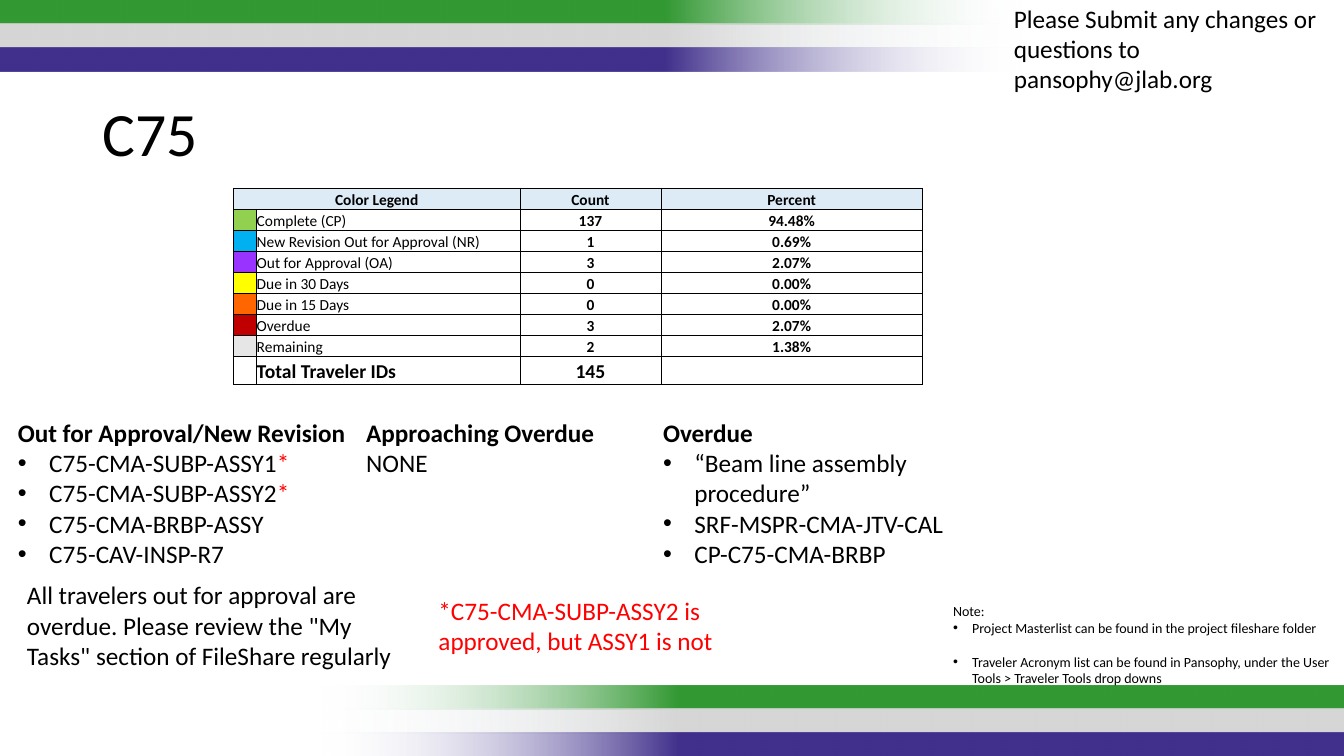
from lxml import etree
from pptx import Presentation
from pptx.dml import color
from pptx.enum import shapes, text
from pptx.oxml import ns
from pptx.util import Cm, Pt

BLACK, RED = "000000", "FF0000"
GREEN, GREY, PURPLE = "339933", "D6D6D6", "42318C"


def paint(target, hex_colour):
    """Give a font, fill or gradient stop a solid colour."""
    if hasattr(target, "solid"):
        target.solid()
        target.fore_color.rgb = color.RGBColor.from_string(hex_colour)
    else:
        target.color.rgb = color.RGBColor.from_string(hex_colour)


def add_span(paragraph, wording, size, colour=BLACK, bold=False):
    span = paragraph.add_run()
    span.text = wording
    for name, value in {"name": "Calibri", "size": Pt(size), "bold": bold}.items():
        setattr(span.font, name, value)
    paint(span.font, colour)


deck = Presentation()
deck.slide_width, deck.slide_height = Cm(33.87), Cm(19.05)
page = deck.slides.add_slide(deck.slide_layouts[6])

# Stripes: the top set is turned so that it fades to the right
BAND_WIDTH, BAND_HEIGHT, BAND_STEP = 25.83, 0.61, 0.595
for left, top, turn in [(-0.03, 0, 180), (8.07, 17.27, 0)]:
    for index, colour in enumerate([GREEN, GREY, PURPLE]):
        band = page.shapes.add_shape(
            shapes.MSO_SHAPE.RECTANGLE, Cm(left), Cm(top + index * BAND_STEP),
            Cm(BAND_WIDTH), Cm(BAND_HEIGHT))
        band.rotation = turn
        band.shadow.inherit = False
        band.line.fill.background()
        band.fill.gradient()
        band.fill.gradient_angle = 0
        clear, full = band.fill.gradient_stops
        clear.position, full.position = 0, 0.35
        paint(clear, "F7FAFD")
        paint(full, colour)
        for tint in band.fill._xPr.findall(".//" + ns.qn("a:srgbClr"))[:1]:
            etree.SubElement(tint, ns.qn("a:alpha"), val="0")

# Status table
HEADER = ["Color Legend", None, "Count", "Percent"]
STATUSES = [
    ("92D050", "Complete (CP)", "137", "94.48%"),
    ("00B0F0", "New Revision Out for Approval (NR)", "1", "0.69%"),
    ("9933FF", "Out for Approval (OA)", "3", "2.07%"),
    ("FFFF00", "Due in 30 Days", "0", "0.00%"),
    ("FF6600", "Due in 15 Days", "0", "0.00%"),
    ("C00000", "Overdue", "3", "2.07%"),
    ("E7E6E6", "Remaining", "2", "1.38%"),
]
TOTAL = [None, "Total Traveler IDs", "145", None]
rows = [HEADER] + [[None, *status[1:]] for status in STATUSES] + [TOTAL]
last = len(rows) - 1
widths = [0.56, 6.65, 3.56, 6.58]
heights = [0.53] * last + [0.69]

frame = page.shapes.add_table(len(rows), len(widths), Cm(5.89), Cm(4.75),
                              Cm(sum(widths)), Cm(sum(heights)))
table = frame.table
table.first_row = table.horz_banding = False
for column, width in zip(table.columns, widths):
    column.width = Cm(width)
for row, height in zip(table.rows, heights):
    row.height = Cm(height)

for r, values in enumerate(rows):
    for c, value in enumerate(values):
        cell = table.cell(r, c)
        for side in ["left", "right", "top"]:
            setattr(cell, f"margin_{side}", Cm(0.02))
        cell.margin_bottom = 0
        cell.vertical_anchor = text.MSO_ANCHOR.BOTTOM

        outer = {"lnL": c == 0, "lnR": r == 0 and c == 3, "lnT": r == 0, "lnB": r == last}
        for edge, thick in outer.items():
            line = etree.SubElement(cell._tc.get_or_add_tcPr(), ns.qn(f"a:{edge}"),
                                    w=str(Pt(1 if thick else 0.5)))
            solid = etree.SubElement(line, ns.qn("a:solidFill"))
            etree.SubElement(solid, ns.qn("a:srgbClr"), val=BLACK)

        if r == 0:
            paint(cell.fill, "DDEBF7")
        elif c == 0 and r < last:
            paint(cell.fill, STATUSES[r - 1][0])
        else:
            cell.fill.background()

        para = cell.text_frame.paragraphs[0]
        if r == 0 or c > 1:
            para.alignment = text.PP_ALIGN.CENTER
        if value:
            add_span(para, value, 14 if r == last else 11, bold=c != 1 or r == last)
        else:
            etree.SubElement(para._p, ns.qn("a:endParaRPr"), sz="1100")
table.cell(0, 0).merge(table.cell(0, 1))

# Text boxes: left, top, width, height, size, bullet indent, paragraphs.
# A paragraph is its kind and its spans, each with a colour.
OUT_FOR_APPROVAL = [
    ("heading", [("Out for Approval/New Revision", BLACK)]),
    ("bullet", [("C75-CMA-SUBP-ASSY1", BLACK), ("*", RED)]),
    ("bullet", [("C75-CMA-SUBP-ASSY2", BLACK), ("*", RED)]),
    ("bullet", [("C75-CMA-BRBP-ASSY", BLACK)]),
    ("bullet", [("C75-CAV-INSP-R7", BLACK)]),
]
APPROACHING = [("heading", [("Approaching Overdue", BLACK)]), ("plain", [("NONE", BLACK)])]
OVERDUE = [
    ("heading", [("Overdue", BLACK)]),
    ("bullet", [("“Beam line assembly procedure”", BLACK)]),
    ("bullet", [("SRF-MSPR-CMA-JTV-CAL", BLACK)]),
    ("bullet", [("CP-C75-CMA-BRBP", BLACK)]),
]
CONTACT = [("plain", [("Please Submit any changes or questions to pansophy@jlab.org", BLACK)])]
NOTE = [
    ("plain", [("Note:", BLACK)]),
    ("bullet", [("Project Masterlist can be found in the project fileshare folder", BLACK)]),
    ("spaced bullet", [("Traveler Acronym list can be found in Pansophy, under the User "
                        "Tools > Traveler Tools drop downs", BLACK)]),
]
REMINDER = [("plain", [("All travelers out for approval are overdue. Please review the "
                        "\"My Tasks\" section of FileShare regularly", BLACK)])]
EXCEPTION = [("plain", [("*C75-CMA-SUBP-ASSY2 is approved, but ASSY1 is not", RED)])]
TITLE = [("title", [("C75", BLACK)])]

for left, top, width, height, size, indent, paragraphs in [
    (2.33, 2.18, 29.21, 2.51, 44, 0, TITLE),
    (0.2, 10.39, 8.76, 4.13, 18, 0.79, OUT_FOR_APPROVAL),
    (8.98, 10.39, 7.5, 1.8, 18, 0, APPROACHING),
    (16.46, 10.39, 15.32, 4.13, 18, 0.79, OVERDUE),
    (25.3, -0.05, 8.58, 2.57, 18, 0, CONTACT),
    (23.77, 15.06, 10.1, 2.4, 10, 0.48, NOTE),
    (0.43, 14.48, 10.26, 2.57, 18, 0, REMINDER),
    (10.8, 14.88, 7.57, 1.8, 18, 0, EXCEPTION),
]:
    box = page.shapes.add_textbox(Cm(left), Cm(top), Cm(width), Cm(height))
    words = box.text_frame
    words.word_wrap = True
    if paragraphs is TITLE:
        words.vertical_anchor = text.MSO_ANCHOR.MIDDLE
    else:
        words.auto_size = text.MSO_AUTO_SIZE.SHAPE_TO_FIT_TEXT
    if paragraphs is OVERDUE:
        words._txBody.bodyPr.set("numCol", "2")
    for index, (kind, spans) in enumerate(paragraphs):
        para = words.add_paragraph() if index else words.paragraphs[0]
        if kind == "title":
            para.line_spacing = 0.9
        if kind == "spaced bullet":
            para.space_before = Pt(12)
        if "bullet" in kind:
            properties = para._p.get_or_add_pPr()
            properties.set("marL", str(Cm(indent)))
            properties.set("indent", str(-Cm(indent)))
            etree.SubElement(properties, ns.qn("a:buFont"), typeface="Arial")
            etree.SubElement(properties, ns.qn("a:buChar"), char="•")
        for wording, colour in spans:
            add_span(para, wording, size, colour, kind == "heading")

deck.save("out.pptx")
